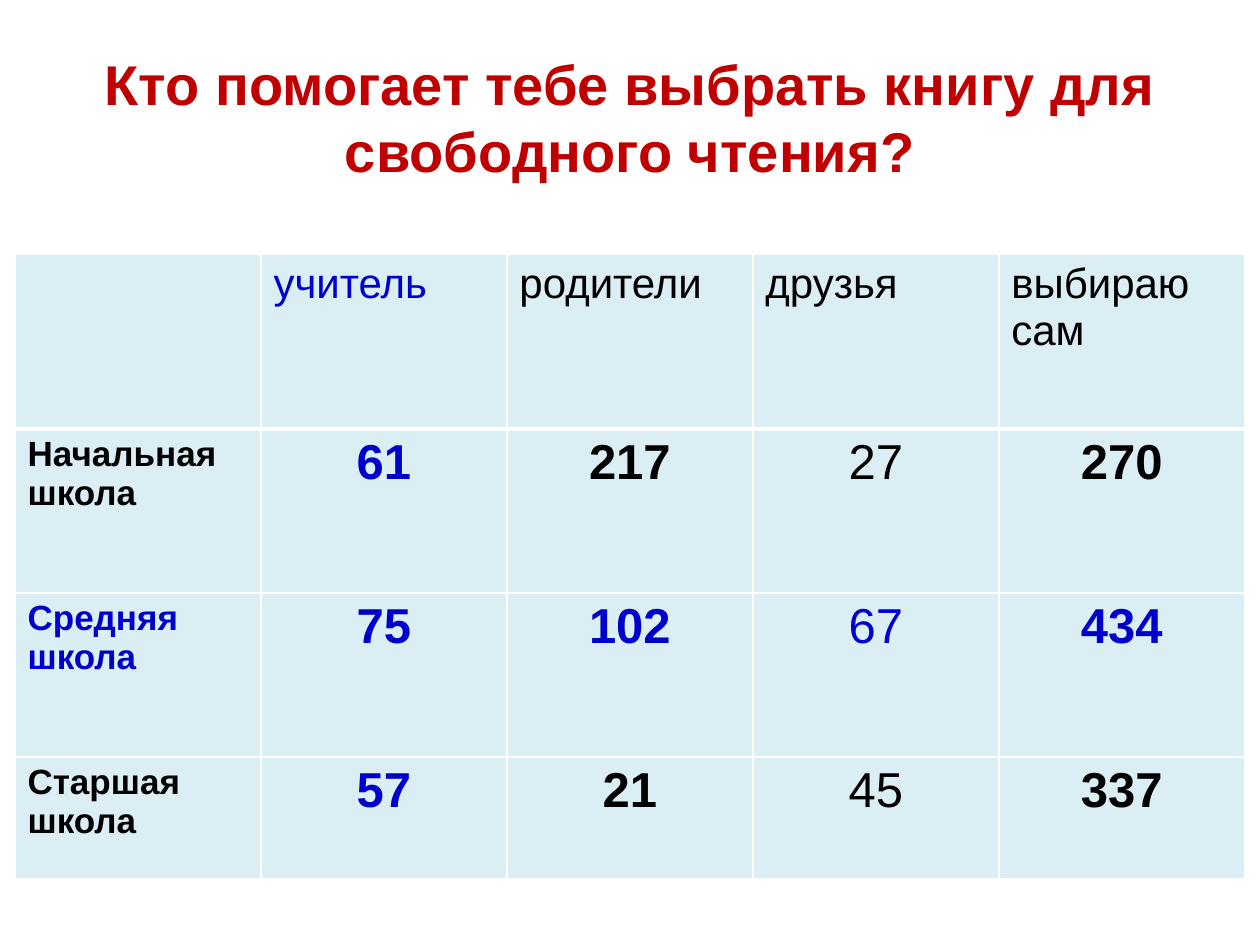
from dataclasses import dataclass

from lxml import etree
from pptx import Presentation
from pptx.dml.color import RGBColor
from pptx.enum.text import MSO_ANCHOR, PP_ALIGN
from pptx.oxml.ns import qn
from pptx.util import Emu, Pt

CENTER, LEFT = PP_ALIGN.CENTER, PP_ALIGN.LEFT
MIDDLE = MSO_ANCHOR.MIDDLE

PX = 914400 // 126
FONT = "Arial"
COLORS = {
    "title": "C00000",
    "accent": "0000CC",
    "text": "000000",
    "cell": "DBEEF4",
    "border": "FFFFFF",
}

TABLE_LEFT, TABLE_TOP = 15, 254
COLUMN_WIDTH = 246
ROW_HEIGHTS = [175, 164, 164, 122]
TEACHER_COLUMN, FRIENDS_COLUMN = 1, 3


@dataclass
class TextStyle:
    size: int
    color: str
    bold: bool = False
    align: PP_ALIGN = LEFT


@dataclass
class SchoolRow:
    name: str
    counts: list[int]
    color: str = "text"


HEADERS = ["", "учитель", "родители", "друзья", "выбираю сам"]
SCHOOLS = [
    SchoolRow("Начальная школа", [61, 217, 27, 270]),
    SchoolRow("Средняя школа", [75, 102, 67, 434], "accent"),
    SchoolRow("Старшая школа", [57, 21, 45, 337]),
]


def px(length: int) -> Emu:
    return Emu(length * PX)


def write_text(text_frame, text: str, style: TextStyle) -> None:
    text_frame.text = text
    paragraph = text_frame.paragraphs[0]
    paragraph.alignment = style.align
    for run in paragraph.runs:
        run.font.name = FONT
        run.font.size = Pt(style.size)
        run.font.bold = style.bold
        run.font.color.rgb = RGBColor.from_string(COLORS[style.color])


def set_borders(cell, bottom_width: int) -> None:
    properties = cell._tc.get_or_add_tcPr()
    widths = {"a:lnL": 1, "a:lnR": 1, "a:lnT": 1, "a:lnB": bottom_width}
    for position, (tag, width) in enumerate(widths.items()):
        line = etree.Element(qn(tag), w=str(Pt(width)))
        fill = etree.SubElement(line, qn("a:solidFill"))
        etree.SubElement(fill, qn("a:srgbClr"), val=COLORS["border"])
        properties.insert(position, line)


def fill_cell(cell, text: str, style: TextStyle, bottom_width: int = 1) -> None:
    cell.fill.solid()
    cell.fill.fore_color.rgb = RGBColor.from_string(COLORS["cell"])
    set_borders(cell, bottom_width)
    write_text(cell.text_frame, text, style)


def column_color(column: int, row_color: str = "text") -> str:
    return "accent" if column == TEACHER_COLUMN else row_color


def add_title(slide) -> None:
    title = slide.shapes.add_textbox(px(63), px(38), px(1134), px(157))
    title.text_frame.word_wrap = True
    title.text_frame.vertical_anchor = MIDDLE
    write_text(
        title.text_frame,
        "Кто помогает тебе выбрать книгу для свободного чтения?",
        TextStyle(32, "title", True, CENTER),
    )


def add_survey_table(slide) -> None:
    table = slide.shapes.add_table(
        len(ROW_HEIGHTS), len(HEADERS), px(TABLE_LEFT), px(TABLE_TOP),
        px(COLUMN_WIDTH * len(HEADERS)), px(sum(ROW_HEIGHTS)),
    ).table
    for column in table.columns:
        column.width = px(COLUMN_WIDTH)
    for row, height in zip(table.rows, ROW_HEIGHTS):
        row.height = px(height)

    # Header row
    for column, header in enumerate(HEADERS):
        style = TextStyle(24, column_color(column))
        fill_cell(table.cell(0, column), header, style, bottom_width=3)

    # One row per school level
    for row, school in enumerate(SCHOOLS, start=1):
        fill_cell(table.cell(row, 0), school.name, TextStyle(20, school.color, True))
        for column, count in enumerate(school.counts, start=1):
            color = column_color(column, school.color)
            style = TextStyle(28, color, column != FRIENDS_COLUMN, CENTER)
            fill_cell(table.cell(row, column), str(count), style)


def main() -> None:
    presentation = Presentation()
    presentation.slide_width, presentation.slide_height = px(1260), px(945)
    slide = presentation.slides.add_slide(presentation.slide_layouts[6])
    add_title(slide)
    add_survey_table(slide)
    presentation.save("out.pptx")


if __name__ == "__main__":
    main()
